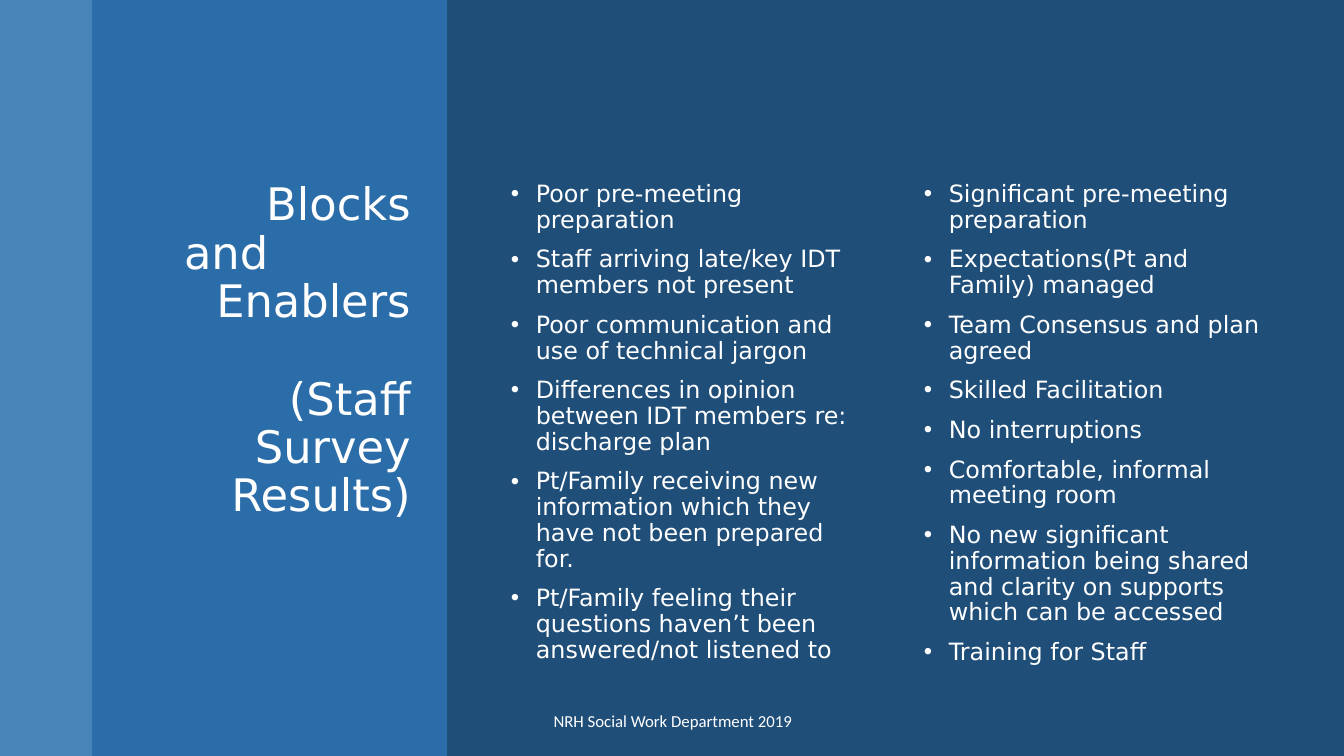
from lxml import etree
from pptx import Presentation
from pptx import util as u
from pptx.dml.color import RGBColor
from pptx.enum import shapes, text
from pptx.oxml.ns import qn

WHITE = "FFFFFF"
BODY_FONT = "DejaVu Sans"


def px(n):
    """Turn pixels, 100.8 to the inch, into EMU."""
    return u.Emu(round(n * 914400 / 100.8))


def write(frame, lines, size, font=BODY_FONT, align="LEFT", anchor="TOP",
          spacing=1.0, gap=0, bullet=None, indent=0):
    frame.word_wrap = True
    frame.auto_size = text.MSO_AUTO_SIZE.NONE
    frame.vertical_anchor = text.MSO_ANCHOR[anchor]
    for i, line in enumerate(lines):
        para = frame.paragraphs[0] if i == 0 else frame.add_paragraph()
        para.text = line
        para.alignment = text.PP_ALIGN[align]
        para.line_spacing = spacing
        para.space_before = u.Pt(gap if i else 0)
        if bullet:
            props = para._p.get_or_add_pPr()
            props.set("marL", str(px(indent)))
            props.set("indent", str(-px(indent)))
            etree.SubElement(props, qn("a:buFont"), typeface="Arial")
            etree.SubElement(props, qn("a:buChar"), char=bullet)
        para.font.size = u.Pt(size)
        para.font.name = font
        para.font.color.rgb = RGBColor.from_string(WHITE)


prs = Presentation()
prs.slide_width, prs.slide_height = px(1344), px(756)
slide = prs.slides.add_slide(prs.slide_layouts[5])
slide.background.fill.solid()
slide.background.fill.fore_color.rgb = RGBColor.from_string("1F4E79")

# Translucent bands on the left, placed behind the title
title = slide.shapes.title
for left, width, colour, opacity in [(0, 92, "5B9BD5", 70), (92, 355, "2E75B6", 80)]:
    band = slide.shapes.add_shape(shapes.MSO_SHAPE.RECTANGLE,
                                  px(left), 0, px(width), px(756))
    band.shadow.inherit = False
    band.line.fill.background()
    band.fill.solid()
    band.fill.fore_color.rgb = RGBColor.from_string(colour)
    fill_colour = band.fill._xPr.find(qn("a:solidFill"))[0]
    etree.SubElement(fill_colour, qn("a:alpha"), val=str(opacity * 1000))
    title._element.addprevious(band._element)

# Title, with its second line set to the left
title.left, title.top, title.width, title.height = px(110), px(177), px(311), px(496)
write(title.text_frame, ["Blocks", "and", "Enablers", "(Staff Survey Results)"],
      size=32, align="RIGHT", spacing=0.9)
title.text_frame.margin_left = px(14)
and_line, survey_line = title.text_frame.paragraphs[1], title.text_frame.paragraphs[3]
and_line.alignment = text.PP_ALIGN.LEFT
and_line._p.get_or_add_pPr().set("marL", str(px(60)))
survey_line.space_before = u.Pt(35)

# Two columns of survey answers
blocks = [
    "Poor pre-meeting preparation",
    "Staff arriving late/key IDT members not present",
    "Poor communication and use of technical jargon",
    "Differences in opinion between IDT members re: discharge plan",
    "Pt/Family receiving new information which they have not been prepared for.",
    "Pt/Family feeling their questions haven’t been answered/not listened to",
]
enablers = [
    "Significant pre-meeting preparation",
    "Expectations(Pt and Family) managed",
    "Team Consensus and plan agreed",
    "Skilled Facilitation",
    "No interruptions",
    "Comfortable, informal meeting room",
    "No new significant information being shared and clarity on supports "
    "which can be accessed",
    "Training for Staff",
]
for left, answers in [(501, blocks), (914, enablers)]:
    column = slide.shapes.add_textbox(px(left), px(177), px(377), px(496))
    write(column.text_frame, answers, size=17, spacing=0.9, gap=10,
          bullet="•", indent=25)

footer = slide.shapes.add_textbox(px(446), px(701), px(454), px(40))
write(footer.text_frame, ["NRH Social Work Department 2019"], size=12,
      font="Calibri", align="CENTER", anchor="MIDDLE")

prs.save("out.pptx")
